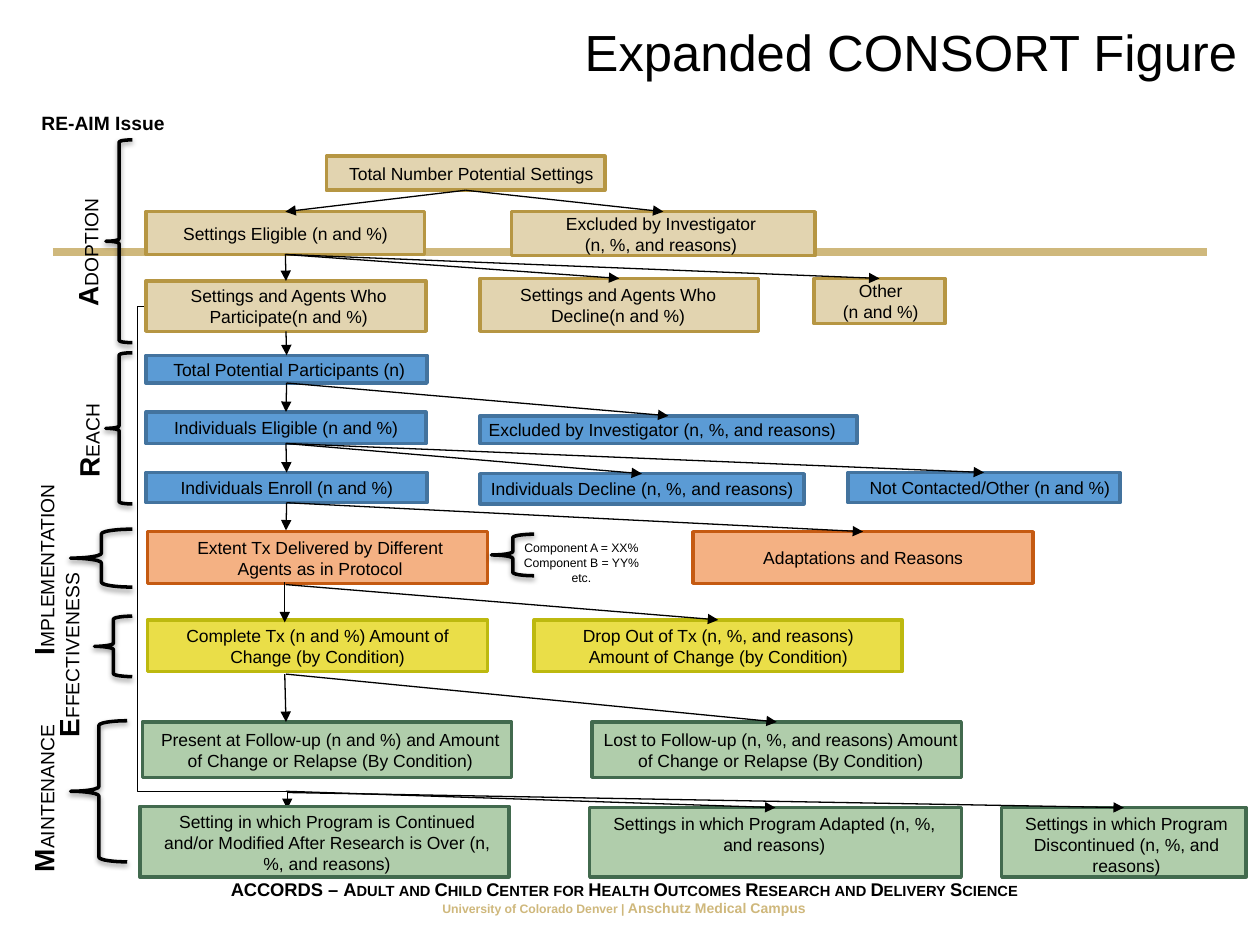
from lxml.etree import SubElement
from pptx import Presentation
from pptx.dml.color import RGBColor
from pptx.enum.shapes import MSO_CONNECTOR, MSO_SHAPE
from pptx.enum.text import MSO_ANCHOR, PP_ALIGN
from pptx.oxml.ns import qn
from pptx.util import Pt

PX = 9144  # 100 px to the inch
SNAP = 4   # px within which an arrow end joins the middle of a box side
BLACK, GOLD = "000000", "CFB87C"
color = RGBColor.from_string

presentation = Presentation()
presentation.slide_width, presentation.slide_height = 1000 * PX, 750 * PX
slide = presentation.slides.add_slide(presentation.slide_layouts[5])
shapes = slide.shapes


def write(frame, paragraphs, align=PP_ALIGN.LEFT):
    """Fill a frame with paragraphs, each a list of (text, size, bold, colour) runs."""
    frame.word_wrap = True
    for index, runs in enumerate(paragraphs):
        paragraph = frame.add_paragraph() if index else frame.paragraphs[0]
        paragraph.alignment = align
        for text, size, bold, ink in runs:
            run = paragraph.add_run()
            run.text = text
            run.font.name = "Arial"
            run.font.size = Pt(size)
            run.font.bold = bold
            run.font.color.rgb = color(ink)


def add_line(kind, ends, ink, width, arrow=True):
    line = shapes.add_connector(kind, *(value * PX for value in ends))
    line.line.color.rgb = color(ink)
    line.line.width = Pt(width)
    if arrow:
        SubElement(line.line._get_or_add_ln(), qn("a:tailEnd"), type="triangle")
    SubElement(line._element.spPr, qn("a:effectLst"))
    return line


# Title, rule and footer
title = shapes.title
title.left, title.top, title.width, title.height = 454 * PX, 11 * PX, 546 * PX, 59 * PX
write(title.text_frame, [[("Expanded CONSORT Figure", 29, False, BLACK)]])

add_line(MSO_CONNECTOR.STRAIGHT, (42, 200, 958, 200), GOLD, 4.5, arrow=False)

footer = shapes.add_textbox(79 * PX, 692 * PX, 833 * PX, 40 * PX).text_frame
footer.vertical_anchor = MSO_ANCHOR.MIDDLE
write(footer, [
    [("ACCORDS – ", 10.5, True, BLACK),
     ("Adult and Child Center for Health Outcomes Research and Delivery Science",
      10.5, True, BLACK)],
    [("University of Colorado Denver | ", 7, True, GOLD),
     ("Anschutz Medical Campus", 8, True, GOLD)],
], PP_ALIGN.CENTER)
footer.paragraphs[0].runs[1].font._element.set("cap", "small")

# Path from participating settings down to the maintenance row
maintenance_path = add_line(MSO_CONNECTOR.ELBOW, (116, 243, 228, 642), BLACK, 0.75)
geometry = maintenance_path._element.spPr.find(qn("a:prstGeom"))
geometry.set("prst", "bentConnector4")
guides = geometry.find(qn("a:avLst"))
if guides is None:
    guides = SubElement(geometry, qn("a:avLst"))
for guide, value in (("adj1", -6100), ("adj2", 96500)):
    SubElement(guides, qn("a:gd"), name=guide, fmla=f"val {value}")

# Boxes by stage: left, top, width, height, label, left and right inset
stages = [
    ("E2D4B0", "B69643", [
        (259, 124, 221, 27, "Total Number Potential Settings", 14, 5),
        (116, 168, 221, 34, "Settings Eligible (n and %)", 10, 10),
        (406, 168, 241, 35, "Excluded by Investigator\n(n, %, and reasons)", 8, 12),
        (116, 223, 222, 40, "Settings and Agents Who Participate(n and %)", 12, 8),
        (381, 221, 221, 42, "Settings and Agents Who Decline(n and %)", 9, 11),
        (646, 221, 104, 36, "Other\n(n and %)", 11, 9)]),
    ("5B9BD5", "43739E", [
        (116, 282, 223, 22, "Total Potential Participants (n)", 12, 8),
        (116, 327, 222, 25, "Individuals Eligible (n and %)", 10, 10),
        (381, 330, 299, 22, "Excluded by Investigator (n, %, and reasons)", 3, 13),
        (116, 375, 223, 24, "Individuals Enroll (n and %)", 10, 10),
        (381, 376, 257, 24, "Individuals Decline (n, %, and reasons)", 4, 4),
        (673, 375, 216, 24, "Not Contacted/Other (n and %)", 14, 5)]),
    ("F4B183", "C55A11", [
        (117, 422, 270, 41, "Extent Tx Delivered by Different Agents as in Protocol", 39, 35),
        (550, 422, 270, 41, "Adaptations and Reasons", 10, 10)]),
    ("EADE48", "BDB90F", [
        (117, 492, 270, 41, "Complete Tx (n and %) Amount of Change (by Condition)", 16, 16),
        (424, 492, 292, 41,
         "Drop Out of Tx (n, %, and reasons) Amount of Change (by Condition)", 17, 17)]),
    ("B0CDAB", "426A4E", [
        (113, 573, 293, 44,
         "Present at Follow-up (n and %) and Amount of Change or Relapse (By Condition)", 11, 6),
        (470, 573, 293, 44,
         "Lost to Follow-up (n, %, and reasons) Amount of Change or Relapse (By Condition)", 6, 0),
        (111, 640, 293, 56, "Setting in which Program is Continued and/or Modified "
         "After Research is Over (n, %, and reasons)", 12, 8),
        (468, 641, 295, 55, "Settings in which Program Adapted (n, %, and reasons)", 10, 12),
        (795, 641, 194, 55, "Settings in which Program Discontinued (n, %, and reasons)", 13, 9)]),
]
boxes = []
for fill, border, stage_boxes in stages:
    for left, top, width, height, label, inset_left, inset_right in stage_boxes:
        box = shapes.add_shape(MSO_SHAPE.RECTANGLE, left * PX, top * PX, width * PX, height * PX)
        box.shadow.inherit = False
        box.fill.solid()
        box.fill.fore_color.rgb = color(fill)
        box.line.color.rgb = color(border)
        box.line.width = Pt(2)
        frame = box.text_frame
        frame.margin_left, frame.margin_right = inset_left * PX, inset_right * PX
        frame.margin_top = frame.margin_bottom = 4 * PX if height > 50 else 0
        frame.vertical_anchor = MSO_ANCHOR.TOP if height > 50 else MSO_ANCHOR.MIDDLE
        write(frame, [[(row, 10, False, BLACK)] for row in label.split("\n")], PP_ALIGN.CENTER)
        boxes.append((box, left + width / 2, top, top + height))

# Arrows: start x and y, end x and y
arrows = [
    (370, 151, 227, 168), (370, 151, 527, 168),
    (227, 202, 227, 223), (227, 202, 491, 221), (227, 202, 698, 221),
    (227, 263, 227, 282),
    (227, 304, 227, 327), (227, 304, 530, 330),
    (227, 354, 228, 375), (227, 354, 509, 376), (227, 354, 781, 375),
    (227, 401, 227, 421), (228, 400, 685, 422),
    (226, 462, 226, 494), (227, 464, 570, 492),
    (226, 535, 227, 573), (227, 535, 620, 572),
    (227, 628, 615, 641), (228, 629, 892, 641),
]
for start_x, start_y, end_x, end_y in arrows:
    arrow = add_line(MSO_CONNECTOR.STRAIGHT, (start_x, start_y, end_x, end_y), BLACK, 0.75)
    for box, middle, top, bottom in boxes:
        if abs(middle - start_x) <= SNAP and abs(bottom - start_y) <= SNAP:
            arrow.begin_connect(box, 2)
        if abs(middle - end_x) <= SNAP and abs(top - end_y) <= SNAP:
            arrow.end_connect(box, 0)

# Braces with a soft shadow
for left, top, width, height in [
    (84, 111, 21, 161), (84, 280, 21, 120), (56, 420, 49, 46),
    (75, 489, 30, 48), (56, 572, 45, 112), (390, 424, 34, 33),
]:
    brace = shapes.add_shape(MSO_SHAPE.LEFT_BRACE, left * PX, top * PX, width * PX, height * PX)
    brace.fill.background()
    brace.line.color.rgb = color(BLACK)
    brace.line.width = Pt(2)
    brace.shadow.inherit = False
    effects = brace._element.spPr.find(qn("a:effectLst"))
    shadow = SubElement(effects, qn("a:outerShdw"), blurRad=str(Pt(3.1)), dist=str(Pt(1.6)),
                        dir="5400000", rotWithShape="0")
    shade = SubElement(shadow, qn("a:srgbClr"), val=BLACK)
    SubElement(shade, qn("a:alpha"), val="38000")

# RE-AIM issues, reading upwards
for issue, left, top, width, height in [
    ("ADOPTION", 51, 131, 37, 122), ("REACH", 52, 293, 37, 96),
    ("IMPLEMENTATION", 16, 350, 47, 180), ("EFFECTIVENESS", 36, 433, 47, 162),
    ("MAINTENANCE", 16, 557, 47, 145),
]:
    frame = shapes.add_textbox(left * PX, top * PX, width * PX, height * PX).text_frame
    frame._txBody.bodyPr.set("vert", "vert270")
    write(frame, [[(issue[0], 16, True, BLACK), (issue[1:], 11, False, BLACK)]])

heading = shapes.add_textbox(23 * PX, 83 * PX, 135 * PX, 29 * PX).text_frame
write(heading, [[("RE-AIM Issue", 11, True, BLACK)]])

components = shapes.add_textbox(395 * PX, 424 * PX, 133 * PX, 45 * PX).text_frame
write(components, [[(row, 7, False, BLACK)] for row in
                   ("Component A = XX%", "Component B = YY%", "etc.")], PP_ALIGN.CENTER)

presentation.save("out.pptx")
